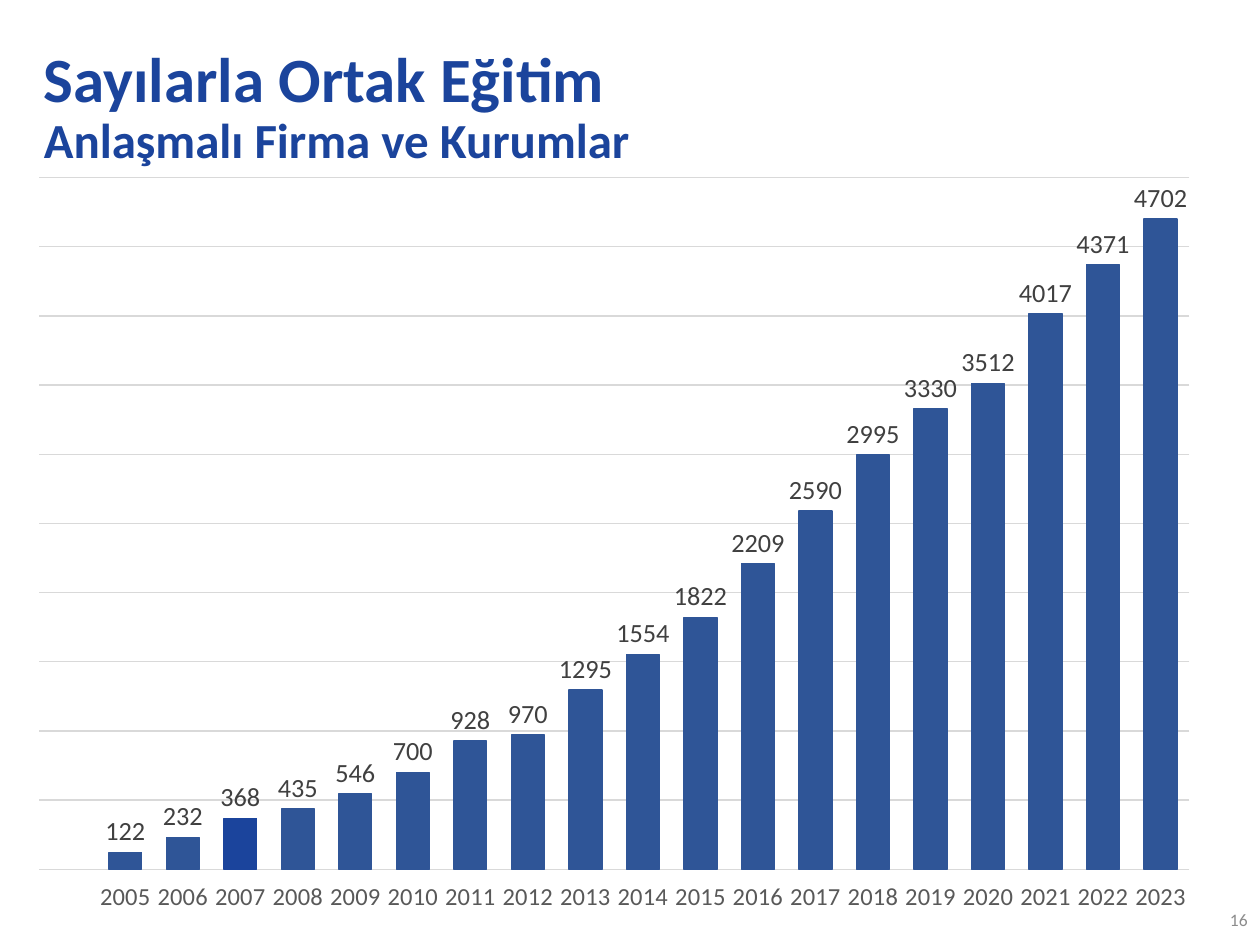
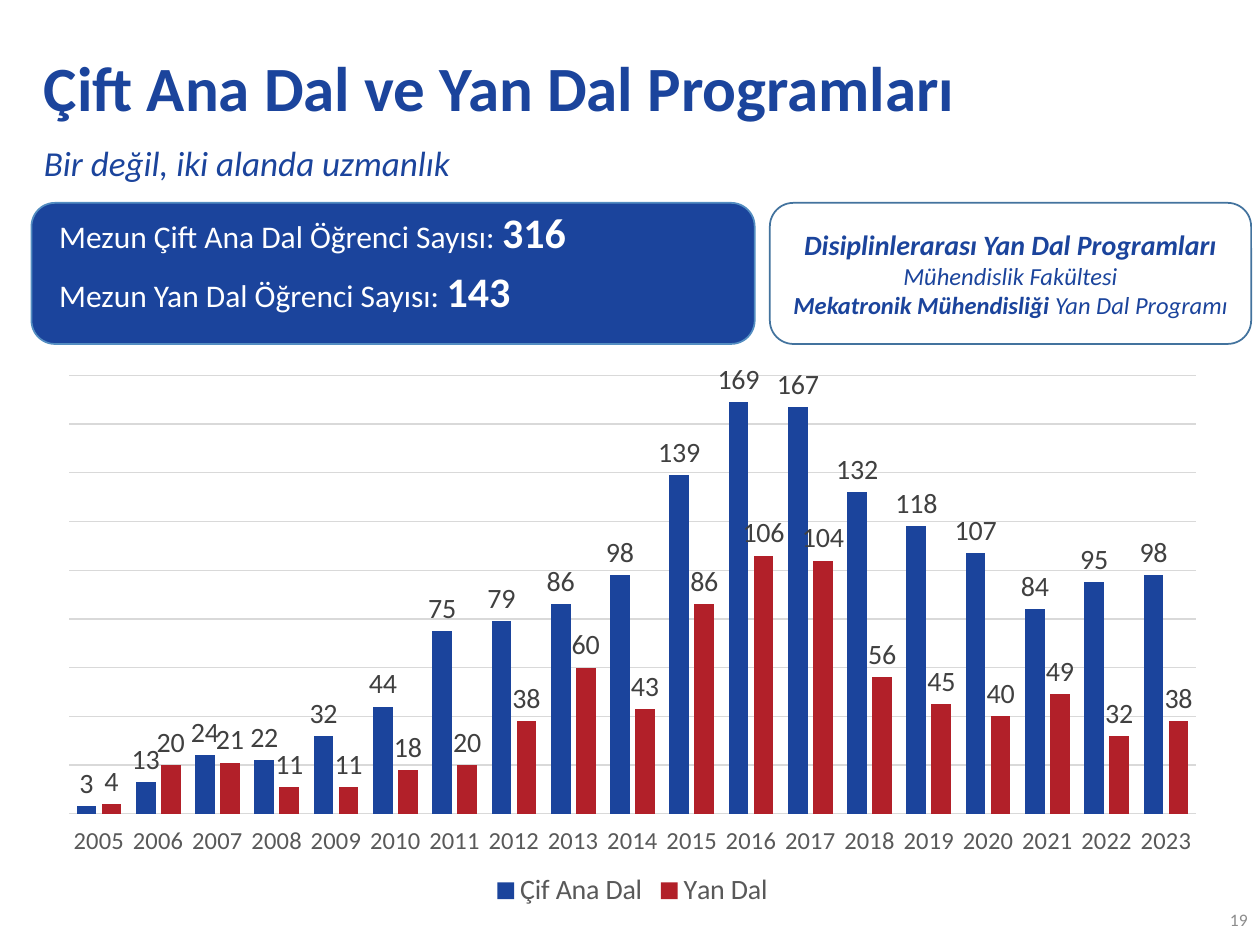
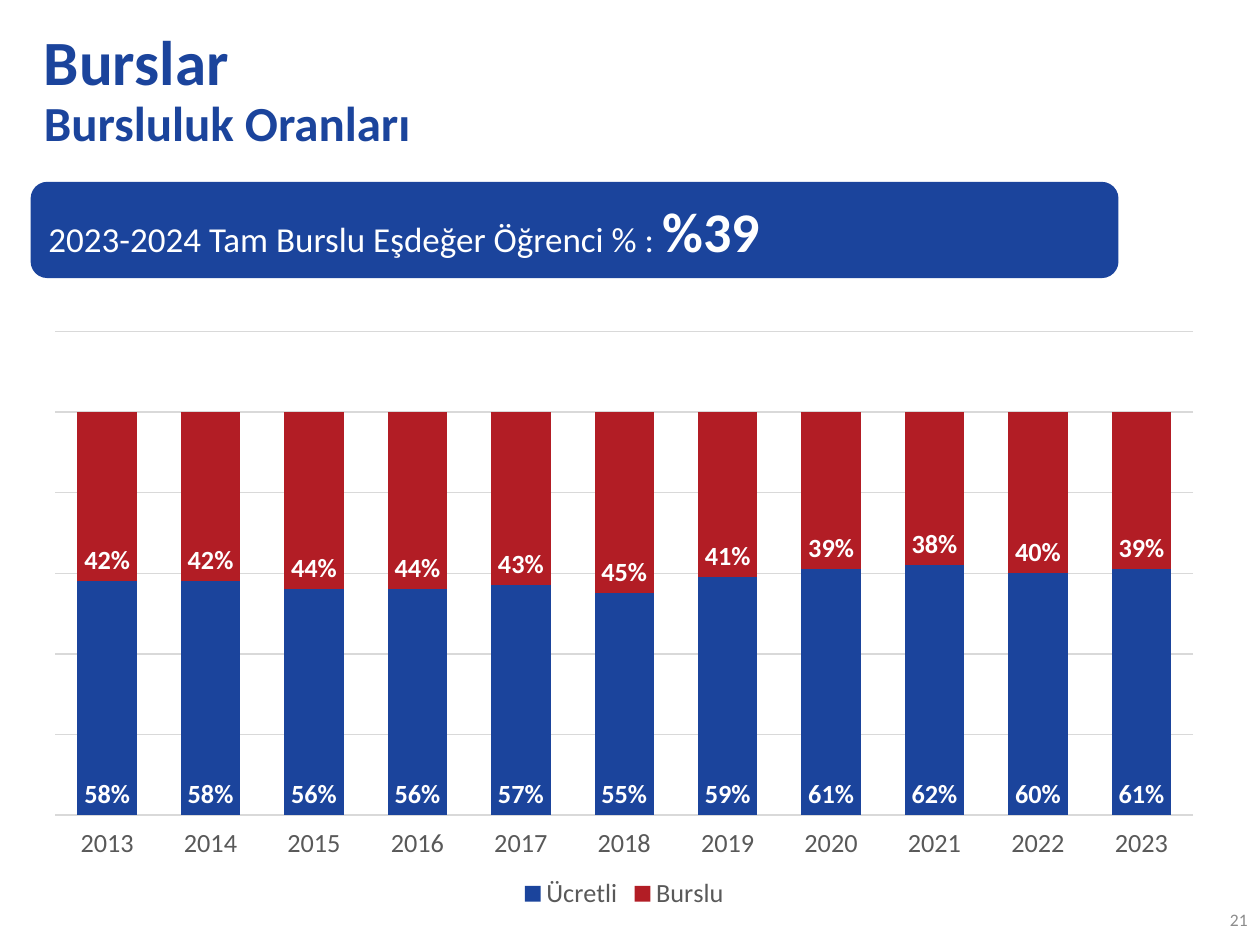
from dataclasses import dataclass

from pptx import Presentation
from pptx.chart.data import CategoryChartData as ChartData
from pptx.dml.color import RGBColor
from pptx.enum.chart import XL_CHART_TYPE as ChartType
from pptx.enum.chart import XL_LABEL_POSITION as LabelPosition
from pptx.enum.chart import XL_LEGEND_POSITION as LegendPosition
from pptx.enum.chart import XL_TICK_LABEL_POSITION as TickLabels
from pptx.enum.chart import XL_TICK_MARK as TickMark
from pptx.enum.shapes import MSO_SHAPE as Preset
from pptx.enum.text import MSO_ANCHOR as Anchor
from pptx.enum.text import PP_ALIGN as Align
from pptx.oxml import parse_xml
from pptx.oxml.ns import nsdecls
from pptx.util import Inches, Pt


@dataclass(frozen=True)
class Theme:
    font: str = "Calibri"
    blue: str = "1B449C"
    steel: str = "2F5597"
    red: str = "B22029"
    deep_red: str = "B21D25"
    white: str = "FFFFFF"
    panel_edge: str = "538DC1"
    card_edge: str = "43739E"
    grid: str = "D9D9D9"
    axis_text: str = "595959"
    label_text: str = "404040"
    number_text: str = "8C8C8C"
    title: int = 36
    subtitle: int = 28
    figure: int = 24
    lead: int = 20
    body: int = 18
    small: int = 14
    number: int = 10


THEME = Theme()
TITLE_SIZE = (8.62, 1.45)
NUMBER_BOX = (7.75, 7.1, 2.25, 0.4)


# ---- Shared helpers ----
def color(value):
    return RGBColor.from_string(value)


def style_font(font, size, tint, bold=False, italic=False):
    font.name = THEME.font
    font.size = Pt(size)
    font.color.rgb = color(tint)
    font.bold = bold
    font.italic = italic


def style_line(line, tint, width=0.75):
    line.color.rgb = color(tint)
    line.width = Pt(width)


def write(frame, paragraphs, size=THEME.body, tint=THEME.blue, bold=False,
          italic=False, align=Align.LEFT, anchor=Anchor.MIDDLE,
          spacing=None, after=0, inset=None):
    """Fill a frame; spans are (text, overrides) and "\\n" is a line break."""
    frame.word_wrap = True
    frame.vertical_anchor = anchor
    if inset is not None:
        frame.margin_left = frame.margin_right = Inches(inset)
        frame.margin_top = frame.margin_bottom = Inches(inset)
    base = {"size": size, "tint": tint, "bold": bold, "italic": italic}
    for index, spans in enumerate(paragraphs):
        para = frame.add_paragraph() if index else frame.paragraphs[0]
        para.alignment = align
        para.line_spacing = spacing
        para.space_after = Pt(after)
        for text, changes in spans:
            if text == "\n":
                para.add_line_break()
                continue
            span = para.add_run()
            span.text = text
            style_font(span.font, **{**base, **changes})


def text_box(page, box, paragraphs, **style):
    shape = page.shapes.add_textbox(*map(Inches, box))
    write(shape.text_frame, paragraphs, **style)


def panel(shapes, box, fill, edge=None, preset=Preset.ROUNDED_RECTANGLE):
    shape = shapes.add_shape(preset, *map(Inches, box))
    shape.shadow.inherit = False
    shape.fill.solid()
    shape.fill.fore_color.rgb = color(fill)
    if edge:
        style_line(shape.line, edge, 1)
    else:
        shape.line.fill.background()
    return shape


def start_page(deck, title, number, subtitle=None, top=0):
    """Blank page with its heading and page number."""
    page = deck.slides.add_slide(deck.slide_layouts[6])
    spans = [(title, {})]
    if subtitle:
        spans += [("\n", {}), (subtitle, {"size": THEME.subtitle})]
    text_box(page, (0.25, top, *TITLE_SIZE), [spans],
             size=THEME.title, bold=True, spacing=0.9)
    text_box(page, NUMBER_BOX, [[(str(number), {})]], size=THEME.number,
             tint=THEME.number_text, align=Align.RIGHT)
    return page


def fix_plot_area(chart, box, plot):
    """Pin the inner plot area; both boxes are in page inches."""
    left, top, width, height = box
    shares = {"x": (plot[0] - left) / width, "y": (plot[1] - top) / height,
              "w": plot[2] / width, "h": plot[3] / height}
    modes = "".join(f'<c:{side}Mode val="edge"/>' for side in "xy")
    sizes = "".join(f'<c:{key} val="{share:.4f}"/>' for key, share in shares.items())
    layout = parse_xml(
        f'<c:layout {nsdecls("c")}><c:manualLayout><c:layoutTarget val="inner"/>'
        f"{modes}{sizes}</c:manualLayout></c:layout>")
    plot_area = chart.plots[0]._element.getparent()
    for old in plot_area.findall(layout.tag):
        plot_area.remove(old)
    plot_area.insert(0, layout)


def column_chart(page, box, plot_box, categories, series, top, step,
                 kind=ChartType.COLUMN_CLUSTERED, gap=74, overlap=-27,
                 axis_size=THEME.small, label_size=16, label_tint=THEME.label_text,
                 label_bold=False, position=LabelPosition.OUTSIDE_END,
                 number_format="General", legend=True):
    """Column chart; series are (name, values, colour)."""
    data = ChartData(number_format=number_format)
    data.categories = categories
    for name, values, _ in series:
        data.add_series(name, values)
    chart = page.shapes.add_chart(kind, *map(Inches, box), data).chart
    chart.has_title = False
    chart.font.name = THEME.font
    chart.font.size = Pt(label_size)

    # Axes
    years, amounts = chart.category_axis, chart.value_axis
    years.major_tick_mark = years.minor_tick_mark = TickMark.NONE
    years.tick_label_position = TickLabels.LOW
    style_font(years.tick_labels.font, axis_size, THEME.axis_text)
    style_line(years.format.line, THEME.grid)
    amounts.minimum_scale, amounts.maximum_scale = 0, top
    amounts.major_unit = step
    amounts.has_major_gridlines = True
    style_line(amounts.major_gridlines.format.line, THEME.grid)
    amounts.visible = False

    # Columns and their labels
    plot = chart.plots[0]
    plot.gap_width, plot.overlap = gap, overlap
    plot.vary_by_categories = False
    for column, (_, _, tint) in zip(plot.series, series):
        column.format.fill.solid()
        column.format.fill.fore_color.rgb = color(tint)
        column.invert_if_negative = False
        labels = column.data_labels
        labels.show_value = True
        labels.position = position
        labels.number_format = number_format
        labels.number_format_is_linked = False
        style_font(labels.font, label_size, label_tint, label_bold)

    chart.has_legend = legend
    if legend:
        chart.legend.position = LegendPosition.BOTTOM
        chart.legend.include_in_layout = False
        style_font(chart.legend.font, label_size, THEME.axis_text)
    fix_plot_area(chart, box, plot_box)
    return chart


def year_names(first):
    return [str(year) for year in range(first, 2024)]


# ---- Pages ----
def partner_page(deck):
    page = start_page(deck, "Sayılarla Ortak Eğitim", 16,
                      "Anlaşmalı Firma ve Kurumlar", top=0.14)
    partners = [None, 122, 232, 368, 435, 546, 700, 928, 970, 1295, 1554, 1822,
                2209, 2590, 2995, 3330, 3512, 4017, 4371, 4702]
    chart = column_chart(
        page, (0.12, 1.29, 9.51, 6.01), (0.31, 1.41, 9.13, 5.49),
        ["", *year_names(2005)], [("Series 1", partners, THEME.steel)],
        top=5000, step=500, gap=75, label_size=15, legend=False)
    column = chart.plots[0].series[0]
    style_line(column.format.line, THEME.steel)
    highlight = column.points[3].format
    highlight.fill.solid()
    highlight.fill.fore_color.rgb = color(THEME.blue)
    style_line(highlight.line, THEME.blue)


def graduate_panel(page, box):
    """Blue panel with the graduate totals."""
    left, top, width, _ = box
    group = page.shapes.add_group_shape()
    panel(group.shapes, box, THEME.blue, THEME.panel_edge)
    inner = panel(group.shapes, (left + 0.15, top + 0.06, width - 0.24, 0.86),
                  THEME.blue, preset=Preset.RECTANGLE)
    totals = [("Mezun Çift Ana Dal Öğrenci Sayısı: ", "316"),
              ("Mezun Yan Dal Öğrenci Sayısı: ", "143")]
    strong = {"size": THEME.figure, "bold": True}
    write(inner.text_frame, [[(name, {}), (total, strong)] for name, total in totals],
          tint=THEME.white, spacing=0.9, after=8, inset=0.07)


def program_card(page, box):
    """Outlined card about the interdisciplinary programme."""
    card = panel(page.shapes, box, THEME.white, THEME.card_edge)
    strong = {"bold": True}
    write(card.text_frame, [
        [("Disiplinlerarası Yan Dal Programları", {"size": 16, **strong})],
        [("Mühendislik Fakültesi", {}), ("\n", {}),
         ("Mekatronik Mühendisliği", strong), (" Yan Dal Programı", {})],
    ], size=THEME.small, italic=True, align=Align.CENTER)


def double_major_page(deck):
    page = start_page(deck, "Çift Ana Dal ve Yan Dal Programları", 19)
    text_box(page, (0.25, 1.07, 7.73, 0.44), [[("Bir değil, iki alanda uzmanlık", {})]],
             size=THEME.lead, italic=True, anchor=Anchor.TOP)
    graduate_panel(page, (0.25, 1.61, 5.74, 1.12))
    program_card(page, (6.11, 1.61, 3.82, 1.12))
    majors = [3, 13, 24, 22, 32, 44, 75, 79, 86, 98, 139, 169, 167, 132, 118,
              107, 84, 95, 98]
    minors = [4, 20, 21, 11, 11, 18, 20, 38, 60, 43, 86, 106, 104, 56, 45,
              40, 49, 32, 38]
    column_chart(
        page, (0.36, 2.88, 9.32, 4.37), (0.55, 2.98, 8.94, 3.48), year_names(2005),
        [("Çif Ana Dal", majors, THEME.blue), ("Yan Dal", minors, THEME.red)],
        top=180, step=20)


def scholarship_page(deck):
    page = start_page(deck, "Burslar", 21, "Bursluluk Oranları")
    banner = panel(page.shapes, (0.25, 1.45, 8.62, 0.75), THEME.blue, THEME.blue)
    write(banner.text_frame, [[("2023-2024 Tam Burslu Eşdeğer Öğrenci % : ", {}),
                               ("%39", {"size": 32, "bold": True})]],
          size=THEME.lead, tint=THEME.white)
    paying = [0.58, 0.58, 0.56, 0.56, 0.57, 0.55, 0.59, 0.61, 0.62, 0.6, 0.61]
    funded = [round(1 - share, 2) for share in paying]
    column_chart(
        page, (0.25, 2.54, 9.41, 4.72), (0.44, 2.63, 9.03, 3.84), year_names(2013),
        [("Ücretli", paying, THEME.blue), ("Burslu", funded, THEME.deep_red)],
        top=1.2, step=0.2, kind=ChartType.COLUMN_STACKED, overlap=100,
        axis_size=15, label_size=15, label_tint=THEME.white, label_bold=True,
        position=LabelPosition.INSIDE_BASE, number_format="0%")


def main():
    deck = Presentation()
    deck.slide_width, deck.slide_height = Inches(10), Inches(7.5)
    for build in (partner_page, double_major_page, scholarship_page):
        build(deck)
    deck.save("out.pptx")


if __name__ == "__main__":
    main()
